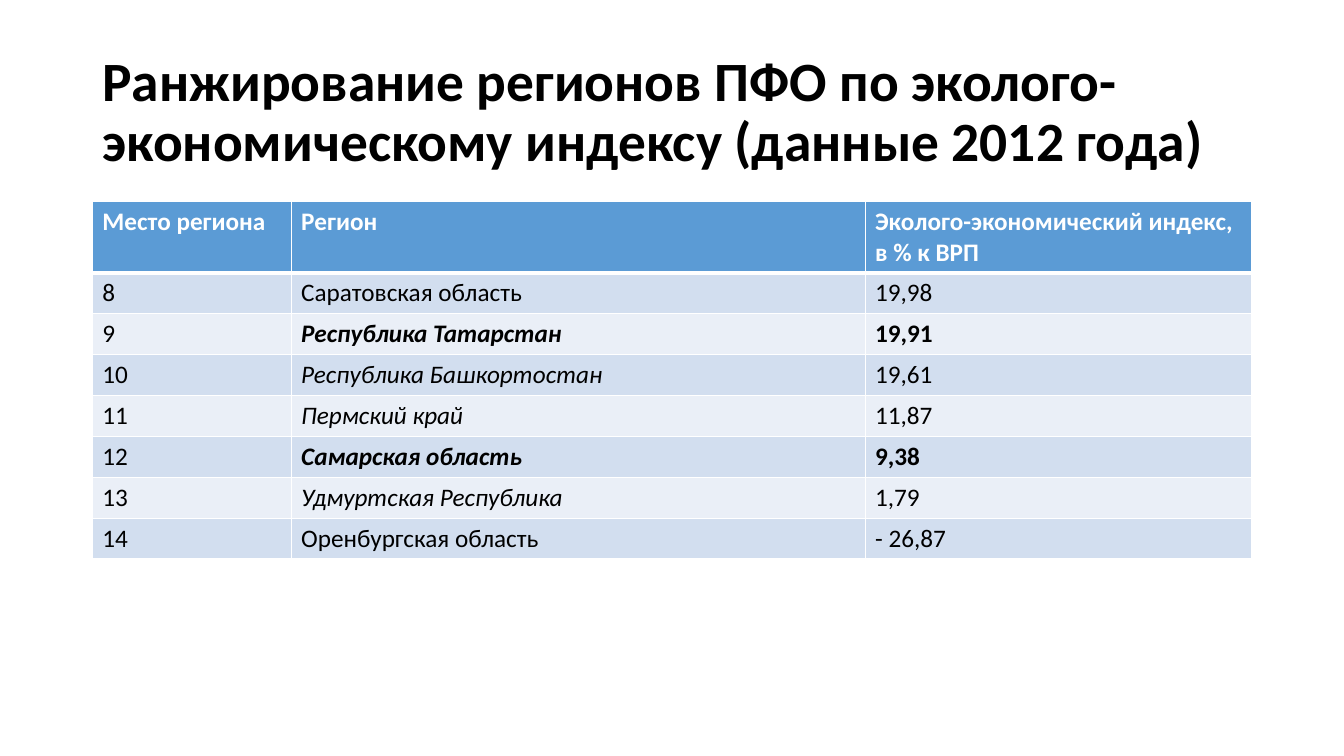
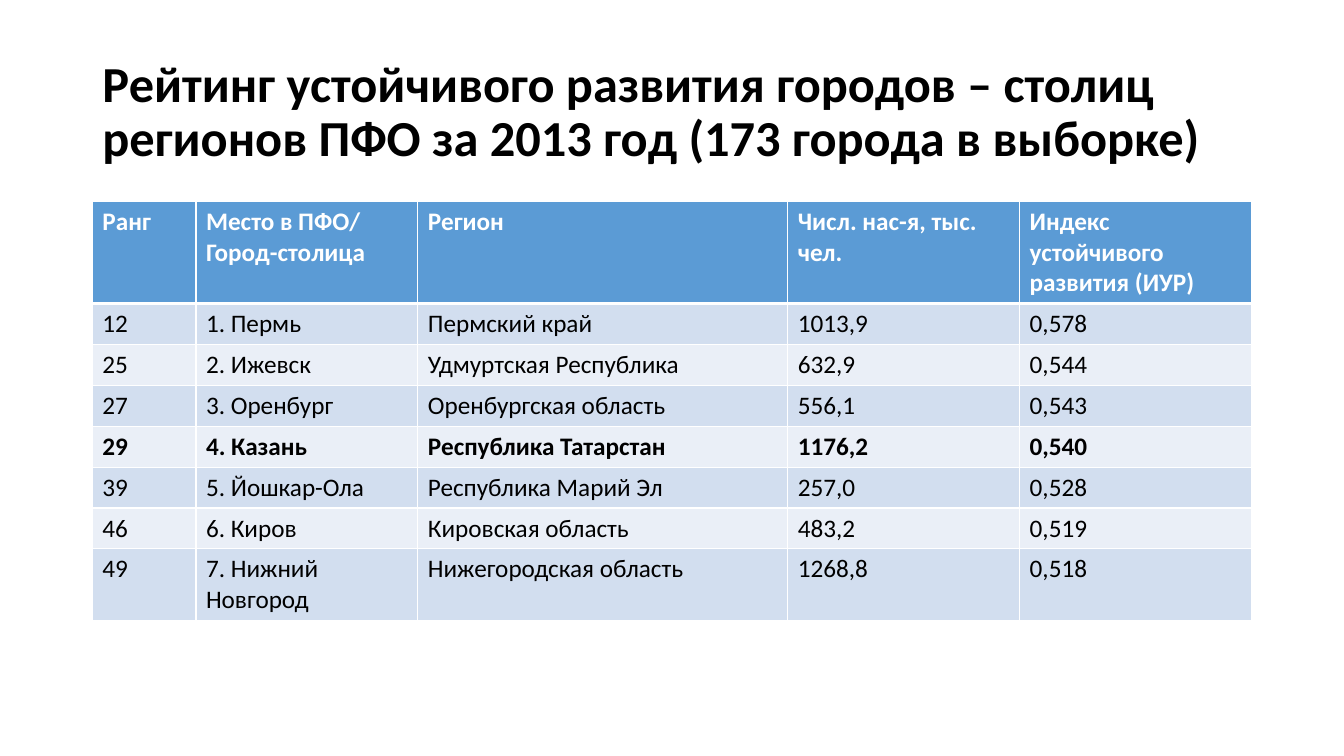
"""Build two slides that rank the regions and capital cities of the Volga district."""
from dataclasses import dataclass

import lxml.etree
import pptx
import pptx.dml.color
import pptx.enum.text
import pptx.oxml.ns
import pptx.util

Pt = pptx.util.Pt


@dataclass(frozen=True)
class Theme:
    font: str = "Calibri"
    text: str = "000000"
    light: str = "FFFFFF"
    header: str = "5B9BD5"
    bands: tuple = ("D2DEEF", "EAEFF7")
    table_size: float = 18
    thin: float = 1
    thick: float = 3


theme = Theme()


def write_text(frame, text, *, size, colour, bold=False, italic=False, spacing=None):
    para = frame.paragraphs[0]
    para.alignment = pptx.enum.text.PP_ALIGN.LEFT
    para.line_spacing = spacing
    span = para.add_run()
    span.text = text
    span.font.name = theme.font
    span.font.size = Pt(size)
    span.font.bold = bold
    span.font.italic = italic
    span.font.color.rgb = pptx.dml.color.RGBColor.from_string(colour)


def style_cell(cell, fill, top, bottom):
    qn = pptx.oxml.ns.qn
    properties = cell._tc.get_or_add_tcPr()
    widths = {"a:lnL": theme.thin, "a:lnR": theme.thin, "a:lnT": top, "a:lnB": bottom}
    for tag, width in widths.items():
        line = lxml.etree.SubElement(properties, qn(tag), w=str(Pt(width)))
        solid = lxml.etree.SubElement(line, qn("a:solidFill"))
        lxml.etree.SubElement(solid, qn("a:srgbClr"), val=theme.light)
    cell.fill.solid()
    cell.fill.fore_color.rgb = pptx.dml.color.RGBColor.from_string(fill)


left, width = 66, 828
title_top, title_height = 28.75, 104.4
table_top, row_height = 143.75, 29.2

slides = [
    {
        "title": "Ранжирование регионов ПФО по эколого-экономическому индексу (данные 2012 года)",
        "title_size": 39.6,
        "columns": [142, 410, 276],
        "bold_ranks": {"9", "12"},
        "bold_columns": {1, 2},
        "italic_ranks": {"9", "10", "11", "12", "13"},
        "italic_columns": {1},
        "rows": [
            ("Место региона", "Регион", "Эколого-экономический индекс, в % к ВРП"),
            ("8", "Саратовская область", "19,98"),
            ("9", "Республика Татарстан", "19,91"),
            ("10", "Республика Башкортостан", "19,61"),
            ("11", "Пермский край", "11,87"),
            ("12", "Самарская область", "9,38"),
            ("13", "Удмуртская Республика", "1,79"),
            ("14", "Оренбургская область", "- 26,87"),
        ],
    },
    {
        "title": "Рейтинг устойчивого развития городов – столиц регионов ПФО за 2013 год (173 города в выборке)",
        "title_size": 36,
        "columns": [74, 158.5, 264.3, 165.6, 165.6],
        "bold_ranks": {"29"},
        "bold_columns": {0, 1, 2, 3, 4},
        "italic_ranks": set(),
        "italic_columns": set(),
        "rows": [
            ("Ранг", "Место в ПФО/ Город-столица", "Регион", "Числ. нас-я, тыс. чел.",
             "Индекс устойчивого развития (ИУР)"),
            ("12", "1. Пермь", "Пермский край", "1013,9", "0,578"),
            ("25", "2. Ижевск", "Удмуртская Республика", "632,9", "0,544"),
            ("27", "3. Оренбург", "Оренбургская область", "556,1", "0,543"),
            ("29", "4. Казань", "Республика Татарстан", "1176,2", "0,540"),
            ("39", "5. Йошкар-Ола", "Республика Марий Эл", "257,0", "0,528"),
            ("46", "6. Киров", "Кировская область", "483,2", "0,519"),
            ("49", "7. Нижний Новгород", "Нижегородская область", "1268,8", "0,518"),
        ],
    },
]

deck = pptx.Presentation()
deck.slide_width, deck.slide_height = Pt(960), Pt(540)
title_only = deck.slide_layouts[5]

for content in slides:
    page = deck.slides.add_slide(title_only)
    title = page.shapes.title
    title.left, title.top = Pt(left), Pt(title_top)
    title.width, title.height = Pt(width), Pt(title_height)
    title.text_frame.word_wrap = True
    title.text_frame.auto_size = pptx.enum.text.MSO_AUTO_SIZE.NONE
    title.text_frame.vertical_anchor = pptx.enum.text.MSO_ANCHOR.MIDDLE
    write_text(title.text_frame, content["title"], size=content["title_size"],
               colour=theme.text, bold=True, spacing=0.9)

    rows = content["rows"]
    table = page.shapes.add_table(
        len(rows), len(content["columns"]), Pt(left), Pt(table_top),
        Pt(width), Pt(row_height * len(rows))).table
    for column, column_width in zip(table.columns, content["columns"]):
        column.width = Pt(column_width)

    for row_index, values in enumerate(rows):
        table.rows[row_index].height = Pt(row_height)
        is_header = row_index == 0
        fill = theme.header if is_header else theme.bands[(row_index - 1) % 2]
        top = theme.thick if row_index == 1 else theme.thin
        bottom = theme.thick if is_header else theme.thin
        for column_index, value in enumerate(values):
            cell = table.cell(row_index, column_index)
            style_cell(cell, fill, top, bottom)
            bold = values[0] in content["bold_ranks"] and column_index in content["bold_columns"]
            italic = values[0] in content["italic_ranks"] and column_index in content["italic_columns"]
            write_text(cell.text_frame, value, size=theme.table_size,
                       colour=theme.light if is_header else theme.text,
                       bold=is_header or bold, italic=italic)

deck.save("out.pptx")
